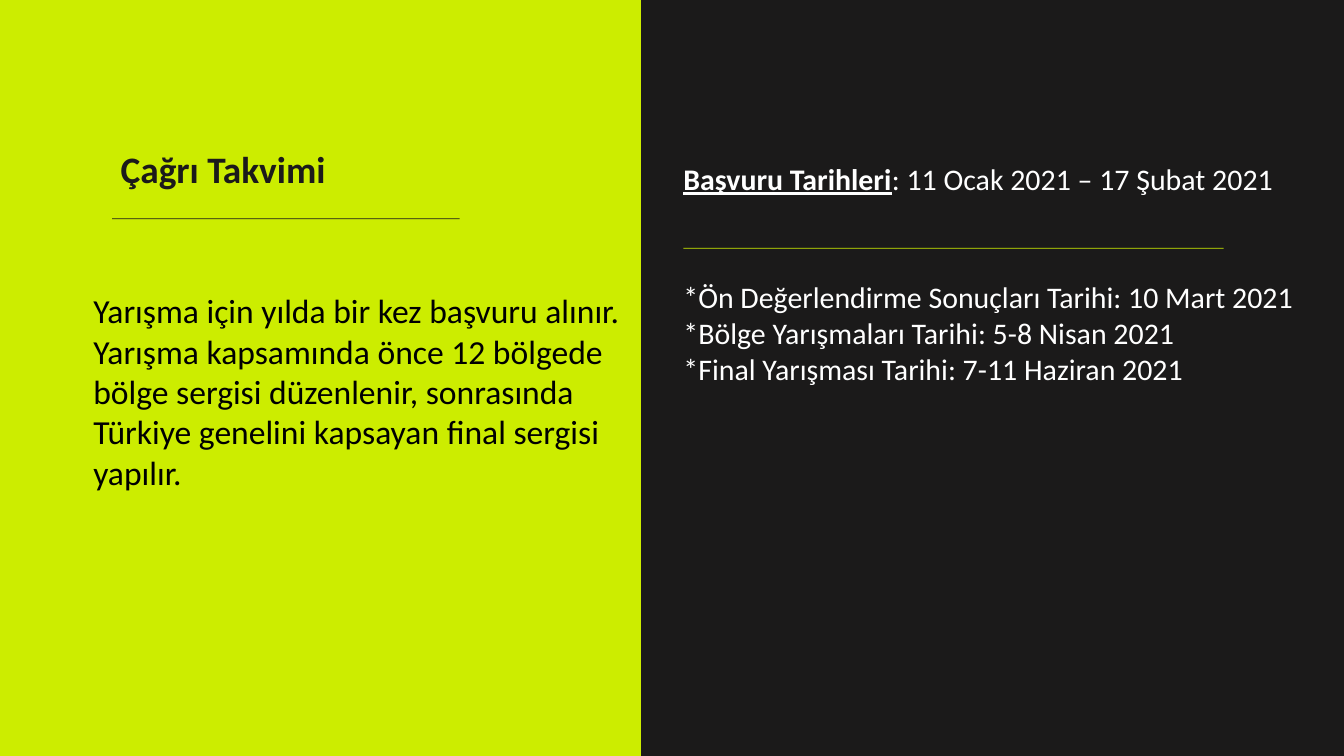
import pptx
import pptx.dml.color
import pptx.enum.shapes
import pptx.util
from pptx.util import Inches

LIME = pptx.dml.color.RGBColor(0xCC, 0xED, 0x00)
CHARCOAL = pptx.dml.color.RGBColor(0x1B, 0x1A, 0x1A)
WHITE = pptx.dml.color.RGBColor(0xFF, 0xFF, 0xFF)
BLACK = pptx.dml.color.RGBColor(0x00, 0x00, 0x00)

FONT = "Calibri"
PAGE_WIDTH, PAGE_HEIGHT = 20, 11.25
PANEL_LEFT = 9.54
TITLE_LEFT, TITLE_WIDTH = 1.67, 5.17
DATES_LEFT, DATES_WIDTH = 10.17, 9.5
RULE_HEIGHT = 0.01


def add_rectangle(page, left, top, width, height, color):
    box = page.shapes.add_shape(
        pptx.enum.shapes.MSO_SHAPE.RECTANGLE,
        Inches(left), Inches(top), Inches(width), Inches(height))
    box.shadow.inherit = False
    box.fill.solid()
    box.fill.fore_color.rgb = color
    box.line.fill.background()


def add_text(page, left, top, width, height, paragraphs, *, size, color,
             bold_lead="", underline=False, line_points=None, margins=(0, 0)):
    """Add paragraphs of text; bold_lead is a bold start of the first one."""
    box = page.shapes.add_textbox(
        Inches(left), Inches(top), Inches(width), Inches(height))
    frame = box.text_frame
    frame.word_wrap = True
    frame.margin_left = frame.margin_right = Inches(margins[0])
    frame.margin_top = frame.margin_bottom = Inches(margins[1])
    for index, text in enumerate(paragraphs):
        para = frame.add_paragraph() if index else frame.paragraphs[0]
        if line_points:
            para.line_spacing = pptx.util.Pt(line_points)
        lead = "" if index else bold_lead
        for words, is_lead in ((lead, True), (text, False)):
            if not words:
                continue
            span = para.add_run()
            span.text = words
            span.font.name = FONT
            span.font.size = pptx.util.Pt(size)
            span.font.color.rgb = color
            span.font.bold = is_lead
            span.font.underline = is_lead and underline


def add_call_summary(page):
    add_rectangle(page, TITLE_LEFT, 3.25, TITLE_WIDTH, RULE_HEIGHT, CHARCOAL)
    add_text(page, TITLE_LEFT, 2.38, TITLE_WIDTH, 0.5, [""],
             bold_lead=" Çağrı Takvimi", size=40, color=CHARCOAL,
             line_points=33)
    add_text(page, 1.29, 4.27, 8.25, 3.13,
             ["Yarışma için yılda bir kez başvuru alınır. "
              "Yarışma kapsamında önce 12 bölgede bölge sergisi düzenlenir, "
              "sonrasında Türkiye genelini kapsayan final sergisi yapılır."],
             size=36, color=BLACK, margins=(0.1, 0.05))


def add_dates(page):
    add_rectangle(page, PANEL_LEFT, 0, PAGE_WIDTH - PANEL_LEFT, PAGE_HEIGHT,
                  CHARCOAL)
    add_rectangle(page, DATES_LEFT, 3.69, 8.04, RULE_HEIGHT, LIME)
    add_text(page, DATES_LEFT, 4.15, DATES_WIDTH, 3.07,
             ["*Ön Değerlendirme Sonuçları Tarihi: 10 Mart 2021",
              "*Bölge Yarışmaları Tarihi: 5-8 Nisan 2021",
              "*Final Yarışması Tarihi: 7-11 Haziran 2021"],
             size=32, color=WHITE)
    add_text(page, DATES_LEFT, 2.46, DATES_WIDTH, 0.46,
             [": 11 Ocak 2021 – 17 Şubat 2021"],
             bold_lead="Başvuru Tarihleri", underline=True,
             size=32, color=WHITE, line_points=33)


def main():
    deck = pptx.Presentation()
    deck.slide_width = Inches(PAGE_WIDTH)
    deck.slide_height = Inches(PAGE_HEIGHT)
    page = deck.slides.add_slide(deck.slide_layouts[6])
    page.background.fill.solid()
    page.background.fill.fore_color.rgb = LIME
    add_dates(page)
    add_call_summary(page)
    deck.save("out.pptx")


if __name__ == "__main__":
    main()
